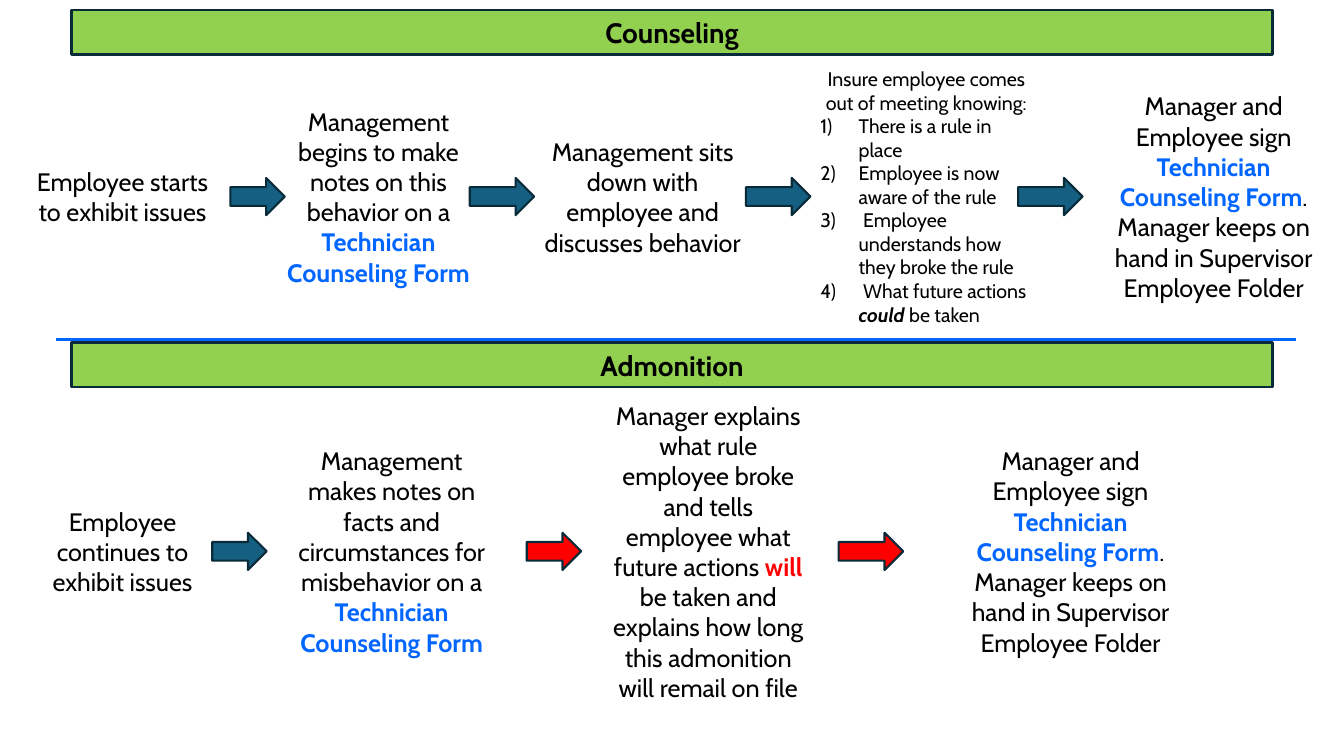
import pptx
import pptx.util
import pptx.dml.color
import pptx.enum.shapes
import pptx.enum.text
import pptx.oxml.ns
import lxml.etree

RGB = pptx.dml.color.RGBColor
SHAPE = pptx.enum.shapes.MSO_SHAPE
ALIGN = pptx.enum.text.PP_ALIGN
BLACK = RGB(0x00, 0x00, 0x00)
WHITE = RGB(0xFF, 0xFF, 0xFF)
BLUE = RGB(0x00, 0x66, 0xFF)
RED = RGB(0xFF, 0x00, 0x00)
GREEN = RGB(0x92, 0xD0, 0x50)
TEAL = RGB(0x15, 0x60, 0x82)
NAVY = RGB(0x09, 0x2A, 0x39)

WIDE = pptx.util.Inches(13.33)
HIGH = pptx.util.Inches(7.5)
COL = WIDE / 100  # lengths across are in hundredths of the slide
ROW = HIGH / 100  # lengths down likewise
BAR = 5.87
SHAFT = 4.93
SHORT, LONG = 4.05, 4.8
HANG = pptx.util.Inches(0.38)

PLAIN = {}
LINK = {"bold": True, "color": BLUE}
WARN = {"bold": True, "color": RED}
STRESS = {"bold": True, "italic": True}
FORM = ("Technician Counseling Form", LINK)
SIGN = [[("Manager and Employee sign ", PLAIN), FORM,
         (". Manager keeps on hand in Supervisor Employee Folder", PLAIN)]]
GOALS = [
    [("Insure employee comes out of meeting knowing:", PLAIN)],
    [("There is a rule in place", PLAIN)],
    [("Employee is now aware of the rule", PLAIN)],
    [(" Employee understands how they broke the rule", PLAIN)],
    [(" What future actions ", PLAIN), ("could", STRESS), (" be taken", PLAIN)],
]

# left, width, lines, size, paragraphs
TALKS = [
    (1.05, 16.13, 2, 18, [[("Employee starts to exhibit issues", PLAIN)]]),
    (20.1, 16.13, 6, 18,
     [[("Management begins to make notes on this behavior on a ", PLAIN), FORM]]),
    (39.75, 16.13, 4, 18,
     [[("Management sits down with employee and discusses behavior", PLAIN)]]),
    (60.3, 17.25, 11, 14, GOALS),
    (81.23, 18.15, 7, 18, SIGN),
]
NOTICES = [
    (1.05, 16.13, 3, 18, [[("Employee continues to exhibit issues", PLAIN)]]),
    (21.08, 16.13, 7, 18,
     [[("Management makes notes on facts and circumstances for misbehavior on a ",
        PLAIN), FORM]]),
    (44.63, 16.13, 10, 18,
     [[("Manager explains what rule employee broke and tells employee what "
        "future actions ", PLAIN), ("will", WARN),
       (" be taken and explains how long this admonition will remail on file",
        PLAIN)]]),
    (70.58, 18.15, 7, 18, SIGN),
]
# left, width, fill
TALK_ARROWS = [(17.14, SHORT, TEAL), (34.95, LONG, TEAL),
               (55.5, LONG, TEAL), (75.75, LONG, TEAL)]
NOTICE_ARROWS = [(15.79, SHORT, TEAL), (39.19, SHORT, RED), (62.4, LONG, RED)]


def put(item, values):
    for name, value in values.items():
        setattr(item, name, value)


def write(par, runs, size):
    for text, style in runs:
        run = par.add_run()
        run.text = text
        look = {"name": "Cabin", "size": pptx.util.Pt(size), **style}
        tint = look.pop("color", BLACK)
        put(run.font, look)
        run.font.color.rgb = tint


def number(par):
    """Turn a paragraph into a hanging numbered item."""
    props = par._p.get_or_add_pPr()
    props.set("marL", str(HANG))
    props.set("indent", str(-HANG))
    mark = lxml.etree.SubElement(props, pptx.oxml.ns.qn("a:buAutoNum"))
    mark.set("type", "arabicParenR")


def block(slide, kind, box, fill, weight):
    shape = slide.shapes.add_shape(kind, *map(round, box))
    shape.shadow.inherit = False
    shape.fill.solid()
    shape.fill.fore_color.rgb = fill
    shape.line.color.rgb = NAVY
    shape.line.width = pptx.util.Pt(weight)
    return shape


def banner(slide, box, title):
    bar = block(slide, SHAPE.RECTANGLE, box, GREEN, 2)
    par = bar.text_frame.paragraphs[0]
    par.alignment = ALIGN.CENTER
    write(par, [(title, {"bold": True})], 20)


def step(slide, left, axis, width, lines, size, pars):
    """Text box centred on the axis, as tall as its lines need."""
    tall = pptx.util.Inches(0.1) + lines * pptx.util.Pt(size * 1.21)
    box = (left, axis - tall / 2, width, tall)
    frame = slide.shapes.add_textbox(*map(round, box)).text_frame
    put(frame, {
        "word_wrap": True,
        "auto_size": pptx.enum.text.MSO_AUTO_SIZE.SHAPE_TO_FIT_TEXT,
        "vertical_anchor": pptx.enum.text.MSO_ANCHOR.MIDDLE,
    })
    for spot, runs in enumerate(pars):
        par = frame.add_paragraph() if spot else frame.paragraphs[0]
        if spot:
            number(par)
        else:
            par.alignment = ALIGN.CENTER
        write(par, runs, size)


def lane(slide, box, title, steps, arrows):
    """Banner above a row of steps and arrows on one middle axis."""
    left, top, width, height = box
    bar = BAR * ROW
    axis = top + (bar + height) / 2
    banner(slide, (left + 0.0533 * width, top, 0.8935 * width, bar), title)
    for start, span, lines, size, pars in steps:
        step(slide, left + start * width / 100, axis, span * width / 100,
             lines, size, pars)
    thick = SHAFT * ROW
    for start, span, fill in arrows:
        place = (left + start * width / 100, axis - thick / 2,
                 span * width / 100, thick)
        block(slide, SHAPE.RIGHT_ARROW, place, fill, 1.5)


def divide(slide, left, right, level):
    line = slide.shapes.add_connector(
        pptx.enum.shapes.MSO_CONNECTOR.STRAIGHT,
        *map(round, (left, level, right, level)))
    line.line.color.rgb = BLUE
    line.line.width = pptx.util.Pt(2)
    lxml.etree.SubElement(line._element.spPr, pptx.oxml.ns.qn("a:effectLst"))


def main():
    deck = pptx.Presentation()
    put(deck, {"slide_width": WIDE, "slide_height": HIGH})
    slide = deck.slides.add_slide(deck.slide_layouts[6])
    slide.background.fill.solid()
    slide.background.fill.fore_color.rgb = WHITE
    lane(slide, (0, 1.33 * ROW, WIDE, 43.47 * ROW), "Counseling",
         TALKS, TALK_ARROWS)
    divide(slide, 4.2 * COL, 96.4 * COL, 44.93 * ROW)
    lane(slide, (0, 45.33 * ROW, WIDE, 49.33 * ROW), "Admonition",
         NOTICES, NOTICE_ARROWS)
    deck.save("out.pptx")


if __name__ == "__main__":
    main()
